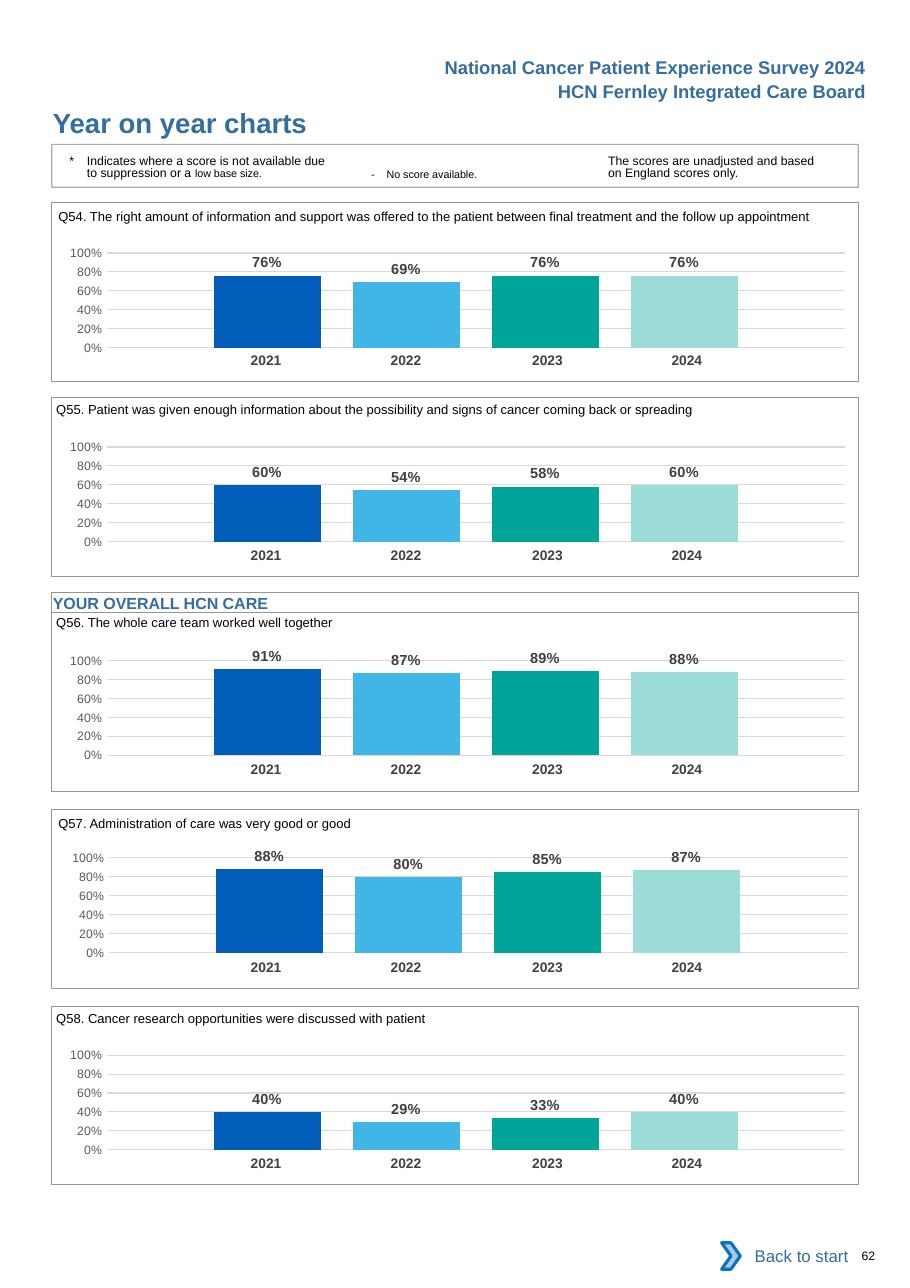
from lxml.etree import SubElement
from pptx import Presentation
from pptx.chart.data import CategoryChartData
from pptx.dml.color import RGBColor
from pptx.enum.chart import XL_CHART_TYPE, XL_LABEL_POSITION, XL_TICK_MARK
from pptx.enum.shapes import MSO_SHAPE
from pptx.enum.text import MSO_ANCHOR, PP_ALIGN
from pptx.oxml import parse_xml
from pptx.oxml.ns import nsdecls, qn
from pptx.util import Inches, Pt

COLOURS = {
    "heading": "336E9F", "text": "000000", "frame": "939598", "year": "414042",
    "label": "404040", "axis": "595959", "grid": "D9D9D9", "white": "FFFFFF",
    "chevron": "A8C7E9", "chevron_line": "0A74BB",
    "2021": "005EB8", "2022": "41B6E6", "2023": "00A499", "2024": "9CDCD7",
}
YEARS = ["2021", "2022", "2023", "2024"]
YEAR_COLUMNS = [(1.27, 0), (1.27, 0), (1.34, 0.04), (1.27, 0.12)]
NO_TABLE_STYLE = "{2D5ABB26-0587-4C30-8999-92F81FD0307C}"
FRAME_LEFT, FRAME_WIDTH, FRAME_HEIGHT = 0.47, 7.32, 1.62
PLOT_AREA = {"x": 0.079, "y": 0.145, "w": 0.915, "h": 0.666}

# Question text, label left and top, frame top, chart left and top, scores.
QUESTIONS = [
    ("Q54. The right amount of information and support was offered to the patient "
     "between final treatment and the follow up appointment",
     (0.53, 1.8), 1.84, (0.39, 2.11), (0.76, 0.69, 0.76, 0.76)),
    ("Q55. Patient was given enough information about the possibility and signs of "
     "cancer coming back or spreading",
     (0.51, 3.55), 3.61, (0.39, 3.87), (0.6, 0.54, 0.58, 0.6)),
    ("Q56. The whole care team worked well together",
     (0.51, 5.49), 5.56, (0.39, 5.81), (0.91, 0.87, 0.89, 0.88)),
    ("Q57. Administration of care was very good or good",
     (0.53, 7.31), 7.35, (0.41, 7.6), (0.88, 0.8, 0.85, 0.87)),
    ("Q58. Cancer research opportunities were discussed with patient",
     (0.51, 9.08), 9.13, (0.39, 9.39), (0.4, 0.29, 0.33, 0.4)),
]


def colour(name):
    """Return the named colour."""
    return RGBColor.from_string(COLOURS[name])


def style_font(font, size, name, bold=False):
    """Set an Arial font with its size, colour and weight."""
    font.name = "Arial"
    font.size = Pt(size)
    font.bold = bold
    font.color.rgb = colour(name)


def write_text(shape, text, size, name="text", bold=False, align=PP_ALIGN.LEFT,
               insets=(0, 0, 0, 0)):
    """Fill a shape with one styled paragraph and return the paragraph."""
    frame = shape.text_frame
    frame.word_wrap = True
    frame.vertical_anchor = MSO_ANCHOR.TOP
    (frame.margin_left, frame.margin_top,
     frame.margin_right, frame.margin_bottom) = map(Inches, insets)
    paragraph = frame.paragraphs[0]
    paragraph.text = text
    paragraph.alignment = align
    style_font(paragraph.font, size, name, bold)
    return paragraph


def add_text(slide, left, top, width, height, text, size, **options):
    """Add a text box holding one paragraph."""
    box = slide.shapes.add_textbox(*map(Inches, (left, top, width, height)))
    return write_text(box, text, size, **options)


def add_note(slide, left, top, width, text, hanging=0):
    """Add a note of the key, with its symbol hung before a tab."""
    paragraph = add_text(slide, left, top, width, 0.27, text, 8, insets=(0, 0.03, 0, 0))
    paragraph.line_spacing = Pt(8.1)
    if hanging:
        properties = paragraph._p.get_or_add_pPr()
        properties.set("marL", str(Inches(hanging)))
        properties.set("indent", str(-Inches(hanging)))
    return paragraph


def add_preset(slide, kind, left, top, width, height, fill=None, line=None, weight=0.5):
    """Add a preset shape with an optional fill and outline."""
    shape = slide.shapes.add_shape(kind, *map(Inches, (left, top, width, height)))
    shape.shadow.inherit = False
    if fill:
        shape.fill.solid()
        shape.fill.fore_color.rgb = colour(fill)
    else:
        shape.fill.background()
    if line:
        shape.line.color.rgb = colour(line)
        shape.line.width = Pt(weight)
    else:
        shape.line.fill.background()
    return shape


def add_frame(slide, top, height, weight=0.5):
    """Add a full-width grey frame."""
    return add_preset(slide, MSO_SHAPE.RECTANGLE, FRAME_LEFT, top, FRAME_WIDTH, height,
                      line="frame", weight=weight)


def add_years(slide, top):
    """Add the row of years below a chart."""
    width = sum(column[0] for column in YEAR_COLUMNS)
    table = slide.shapes.add_table(
        1, len(YEARS), Inches(1.73), Inches(top), Inches(width), Inches(0.27)).table
    table.first_row = table.horz_banding = False
    table._tbl.tblPr.find(qn("a:tableStyleId")).text = NO_TABLE_STYLE
    for index, (year, (column_width, right)) in enumerate(zip(YEARS, YEAR_COLUMNS)):
        table.columns[index].width = Inches(column_width)
        cell = table.cell(0, index)
        cell.fill.background()
        cell.margin_left, cell.margin_right = Inches(0.1), Inches(right)
        paragraph = cell.text_frame.paragraphs[0]
        paragraph.text = year
        paragraph.alignment = PP_ALIGN.CENTER
        style_font(paragraph.font, 9, "year", True)


def set_plot_area(chart):
    """Fix the inner plot area within the chart."""
    parts = '<c:layoutTarget val="inner"/><c:xMode val="edge"/><c:yMode val="edge"/>'
    parts += "".join(f'<c:{key} val="{value}"/>' for key, value in PLOT_AREA.items())
    layout = parse_xml(f'<c:layout {nsdecls("c")}><c:manualLayout>{parts}'
                       '</c:manualLayout></c:layout>')
    plot_area = chart._chartSpace.chart.plotArea
    for previous in plot_area.findall(qn("c:layout")):
        plot_area.remove(previous)
    plot_area.insert(0, layout)


def add_scores(slide, left, top, scores):
    """Add a column chart with one series per year."""
    data = CategoryChartData(number_format="0%")
    data.categories = ["1"]
    for index, score in enumerate(scores, 1):
        data.add_series(f"Series {index}", [score])
    chart = slide.shapes.add_chart(
        XL_CHART_TYPE.COLUMN_CLUSTERED, Inches(left), Inches(top),
        Inches(FRAME_WIDTH), Inches(1.29), data).chart
    chart.has_title = chart.has_legend = False
    chart.font.name, chart.font.size = "Calibri", Pt(10)
    chart.category_axis.visible = False
    axis = chart.value_axis
    axis.minimum_scale, axis.maximum_scale, axis.major_unit = 0, 1, 0.2
    axis.major_tick_mark = XL_TICK_MARK.NONE
    axis.format.line.fill.background()
    axis.major_gridlines.format.line.color.rgb = colour("grid")
    axis.major_gridlines.format.line.width = Pt(0.75)
    axis.tick_labels.number_format = "0%"
    axis.tick_labels.number_format_is_linked = False
    style_font(axis.tick_labels.font, 8, "axis")
    plot = chart.plots[0]
    plot.gap_width, plot.overlap, plot.vary_by_categories = 200, -30, False
    for series, year in zip(plot.series, YEARS):
        series.format.fill.solid()
        series.format.fill.fore_color.rgb = colour(year)
        labels = series.data_labels
        labels.show_value = True
        labels.position = XL_LABEL_POSITION.OUTSIDE_END
        labels.number_format, labels.number_format_is_linked = "0%", False
        style_font(labels.font, 9.5, "label", True)
    set_plot_area(chart)


def add_question(slide, text, label_position, frame_top, chart_position, scores):
    """Add one framed question with its chart and years."""
    add_text(slide, *label_position, 7.25, 0.24, text, 8.5, insets=(0, 0.09, 0, 0))
    add_years(slide, frame_top + 1.31)
    add_scores(slide, *chart_position, scores)
    add_frame(slide, frame_top, FRAME_HEIGHT)


def add_key(slide):
    """Add the framed key to the symbols."""
    add_note(slide, 5.52, 1.38, 1.95,
             "The scores are unadjusted and based on England scores only.")
    add_note(slide, 3.37, 1.5, 1.7, "-\tNo score available.", 0.14).runs[0].font.size = Pt(7)
    note = add_note(slide, 0.63, 1.38, 2.4,
                    "*\tIndicates where a score is not available due to suppression or a ", 0.16)
    ending = note.add_run()
    ending.text = "low base size."
    ending.font.size = Pt(7)
    outline = add_frame(slide, 1.31, 0.39, 0.75).line
    SubElement(outline.color._xFill[0], qn("a:alpha"), val="80000")


def main():
    """Build the year on year charts slide."""
    presentation = Presentation()
    presentation.slide_width, presentation.slide_height = Inches(8.26), Inches(11.69)
    slide = presentation.slides.add_slide(presentation.slide_layouts[6])
    heading = {"name": "heading", "bold": True}
    add_text(slide, 0.48, 0.96, 4.5, 0.3, "Year on year charts", 18, **heading)
    for top, line in ((0.46, "National Cancer Patient Experience Survey 2024"),
                      (0.68, "HCN Fernley Integrated Care Board")):
        add_text(slide, 3.5, top, 4.46, 0.3, line, 12, align=PP_ALIGN.RIGHT,
                 insets=(0.1, 0.05, 0.1, 0.05), **heading)
    add_key(slide)
    write_text(add_frame(slide, 5.38, 0.18), "YOUR OVERALL HCN CARE", 10.5,
               insets=(0.01, 0.01, 0, 0), **heading)
    for question in QUESTIONS:
        add_question(slide, *question)
    button = add_preset(slide, MSO_SHAPE.RECTANGLE, 6.62, 11.19, 1.18, 0.42, fill="white")
    write_text(button, "Back to start", 11, "heading", align=PP_ALIGN.RIGHT,
               insets=(0.1, 0.05, 0.1, 0.05))
    button.text_frame.vertical_anchor = MSO_ANCHOR.MIDDLE
    add_preset(slide, MSO_SHAPE.CHEVRON, 6.55, 11.28, 0.17, 0.24,
               fill="chevron", line="chevron_line", weight=2)
    add_text(slide, 7.82, 11.33, 0.41, 0.13, "62", 8)
    presentation.save("out.pptx")


if __name__ == "__main__":
    main()
